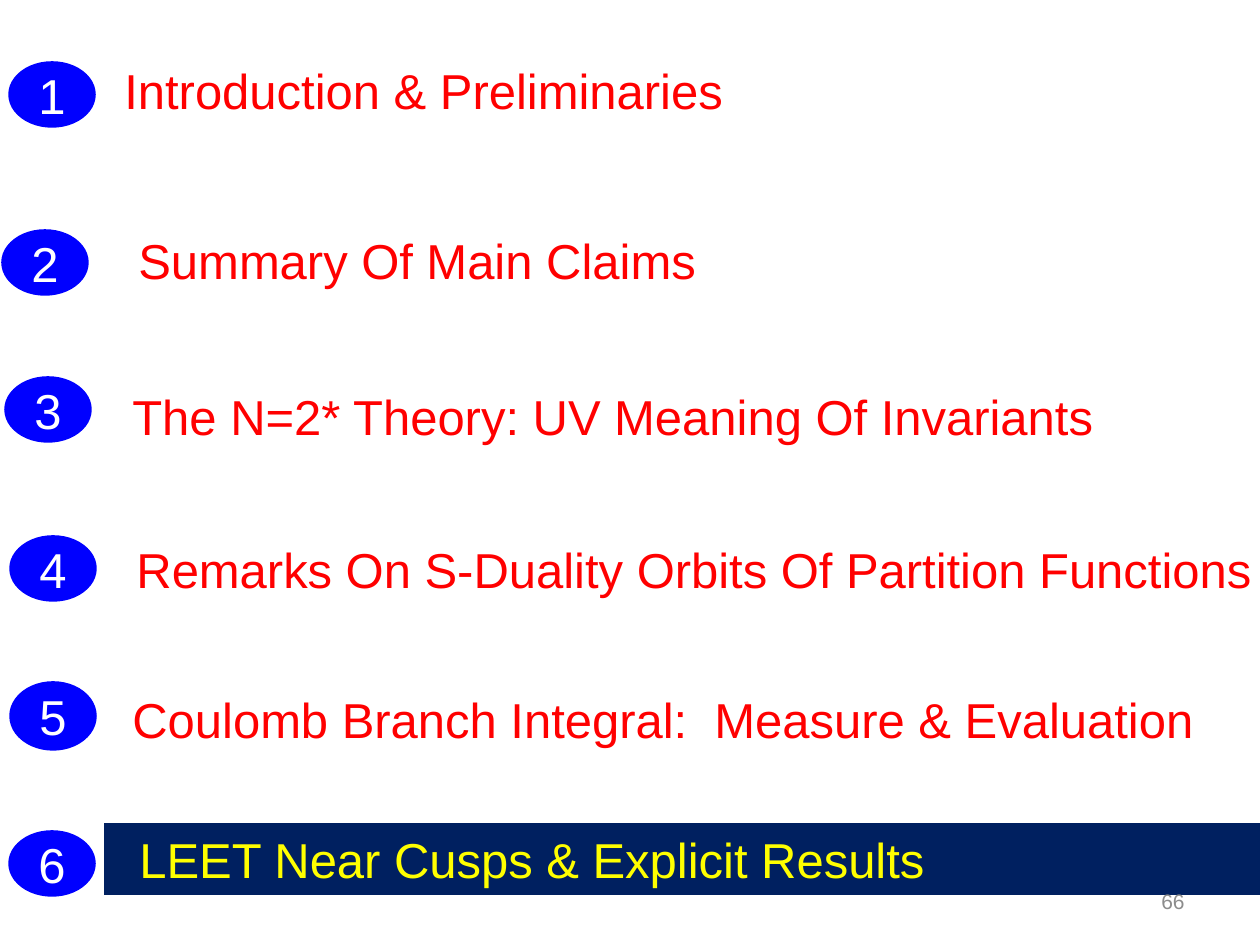
from pptx import Presentation
from pptx.dml.color import RGBColor
from pptx.enum.shapes import MSO_SHAPE
from pptx.enum.text import MSO_ANCHOR, PP_ALIGN
from pptx.util import Pt

SCALE = 914400 / 126
COLORS = {
    "badge": "0000FF",
    "number": "FFFFFF",
    "topic": "FF0000",
    "current": "FFFF00",
    "band": "002060",
    "page": "8C8C8C",
}
BADGE_WIDTH = 84
TOPIC_HEIGHT = 72
TOPICS = [
    ("Introduction & Preliminaries", (10, 63, 63), (112, 54, 1124)),
    ("Summary Of Main Claims", (3, 231, 63), (126, 224, 1026)),
    ("The N=2* Theory: UV Meaning Of Invariants", (6, 378, 63), (120, 380, 1026)),
    ("Remarks On S-Duality Orbits Of Partition Functions", (11, 537, 63), (124, 533, 1176)),
    ("Coulomb Branch Integral:  Measure & Evaluation", (11, 683, 66), (120, 683, 1124)),
    ("LEET Near Cusps & Explicit Results", (10, 832, 63), (127, 823, 1124)),
]
CURRENT = 6


def px(*lengths):
    """Turn pixel lengths into EMU."""
    return [round(length * SCALE) for length in lengths]


def color(name):
    """Look up a named colour."""
    return RGBColor.from_string(COLORS[name])


def write(shape, text, size, tint, align=PP_ALIGN.LEFT, anchor=MSO_ANCHOR.TOP):
    """Set and format the single line of text in a shape."""
    frame = shape.text_frame
    frame.text = text
    frame.word_wrap = True
    frame.vertical_anchor = anchor
    line = frame.paragraphs[0]
    line.alignment = align
    font = line.runs[0].font
    font.name = "Arial"
    font.size = Pt(size)
    font.color.rgb = color(tint)


def add_band(slide, box):
    """Add the dark band behind the current topic."""
    band = slide.shapes.add_shape(MSO_SHAPE.RECTANGLE, *px(*box))
    band.shadow.inherit = False
    band.fill.solid()
    band.fill.fore_color.rgb = color("band")
    band.line.fill.background()


def add_badge(slide, number, box):
    """Add a numbered oval."""
    badge = slide.shapes.add_shape(MSO_SHAPE.OVAL, *px(*box))
    badge.shadow.inherit = False
    badge.fill.solid()
    badge.fill.fore_color.rgb = color("badge")
    badge.line.color.rgb = color("badge")
    badge.line.width = Pt(2)
    write(badge, str(number), 28, "number", PP_ALIGN.CENTER, MSO_ANCHOR.MIDDLE)


def add_topic(slide, topic, tint, box):
    """Add the wording of one agenda topic."""
    write(slide.shapes.add_textbox(*px(*box)), topic, 28, tint)


def add_page_number(slide, number, box):
    """Add the page number at the lower right."""
    page = slide.shapes.add_textbox(*px(*box))
    write(page, number, 12, "page", PP_ALIGN.RIGHT, MSO_ANCHOR.MIDDLE)


def add_agenda(slide):
    """Add every topic with its badge."""
    for number, (topic, badge, wording) in enumerate(TOPICS, 1):
        left, top, height = badge
        add_badge(slide, number, (left, top, BADGE_WIDTH, height))
        tint = "current" if number == CURRENT else "topic"
        add_topic(slide, topic, tint, (*wording, TOPIC_HEIGHT))


def main():
    """Build and save the agenda slide."""
    deck = Presentation()
    deck.slide_width, deck.slide_height = px(1260, 945)
    slide = deck.slides.add_slide(deck.slide_layouts[6])
    add_band(slide, (104, 823, 1156, TOPIC_HEIGHT))
    add_page_number(slide, "66", (903, 876, 294, 50))
    add_agenda(slide)
    deck.save("out.pptx")


if __name__ == "__main__":
    main()
